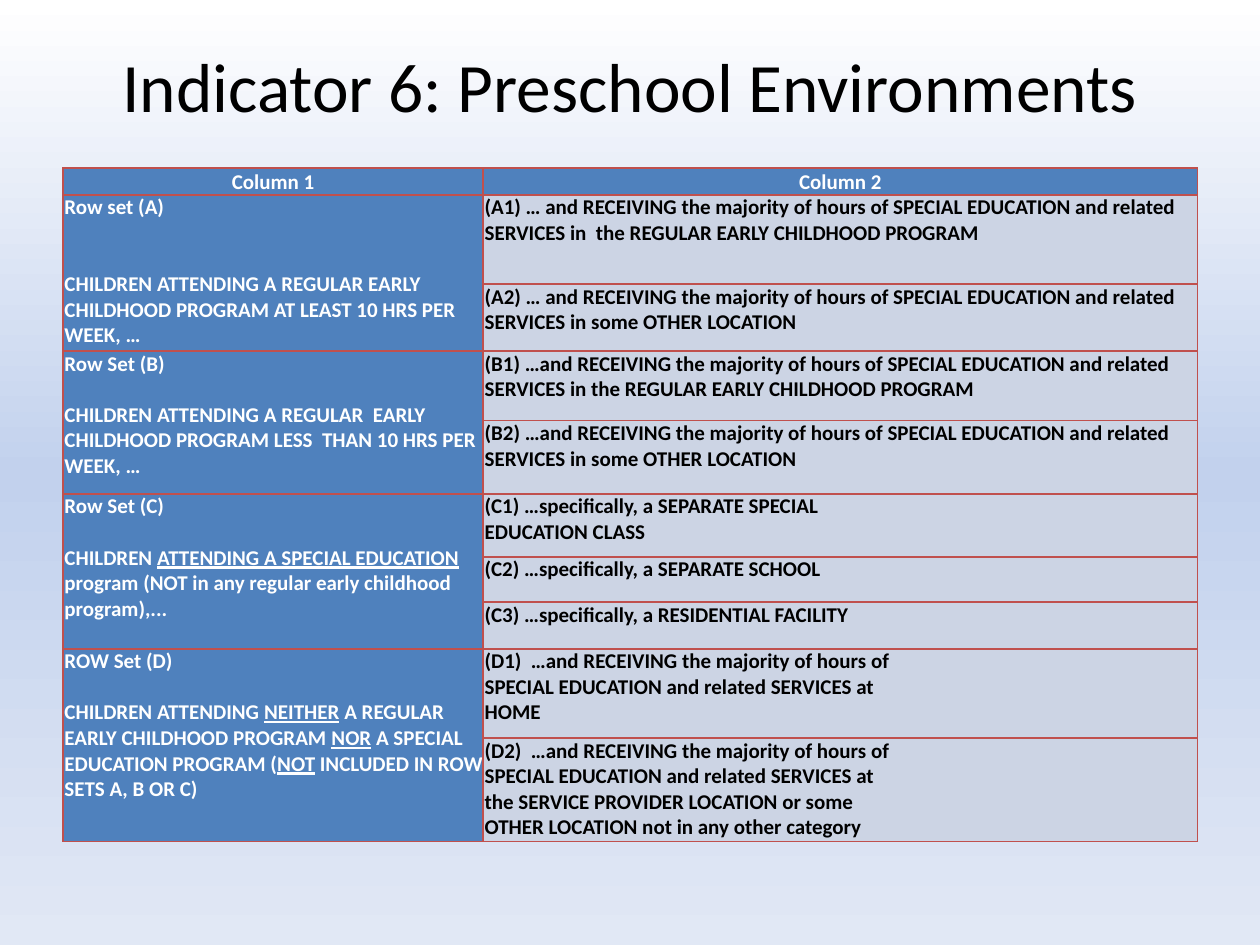
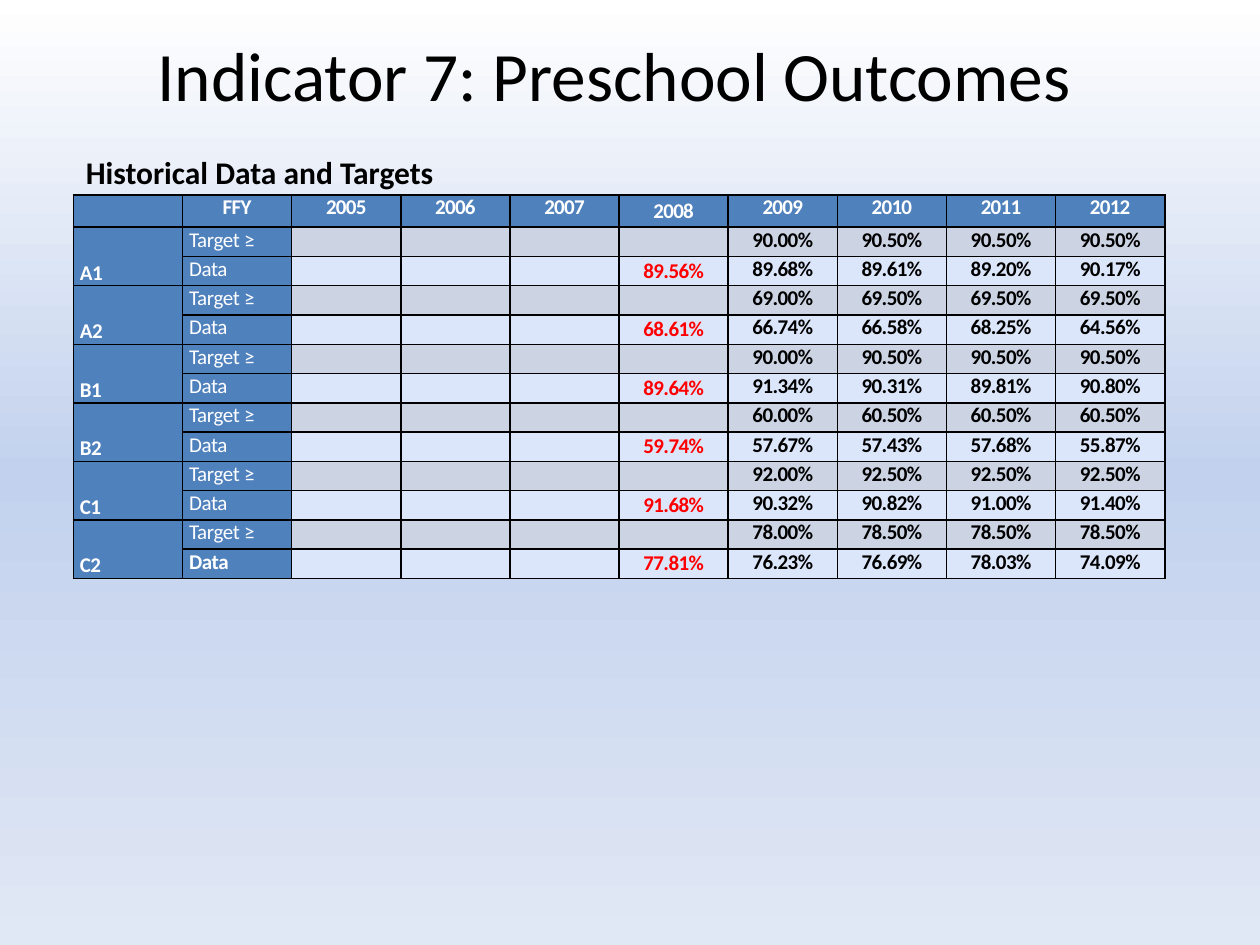
from lxml import etree
from copy import deepcopy
from pptx import Presentation
from pptx.dml.color import RGBColor as RGB
from pptx.enum.text import MSO_ANCHOR as Anchor, MSO_AUTO_SIZE as Fit, PP_ALIGN as Align
from pptx.oxml.ns import qn
from pptx.util import Cm, Pt

FONT = "Calibri"
HUE = {
    "text": "000000", "light": "FFFFFF", "head": "4F81BD", "band": "CCD4E4",
    "pale": "DCE6FA", "alert": "FF0000", "edge": "C0504D",
    "sky": "FFFFFF", "mid": "C2D1ED", "base": "E1E8F5",
}
LINE = 14.65  # height in points of one line of 12 pt text

# Label, gap in lines, description (underscores mark underlined words), rows
SETS = [
    ("Row set (A)", 2,
     "CHILDREN ATTENDING A REGULAR EARLY CHILDHOOD PROGRAM AT LEAST 10 HRS PER WEEK, …",
     ["(A1) … and RECEIVING the majority of hours of SPECIAL EDUCATION and related "
      "SERVICES in  the REGULAR EARLY CHILDHOOD PROGRAM",
      "(A2) … and RECEIVING the majority of hours of SPECIAL EDUCATION and related "
      "SERVICES in some OTHER LOCATION"]),
    ("Row Set (B)", 1,
     "CHILDREN ATTENDING A REGULAR  EARLY CHILDHOOD PROGRAM LESS  THAN 10 HRS PER WEEK, …",
     ["(B1) …and RECEIVING the majority of hours of SPECIAL EDUCATION and related "
      "SERVICES in the REGULAR EARLY CHILDHOOD PROGRAM",
      "(B2) …and RECEIVING the majority of hours of SPECIAL EDUCATION and related "
      "SERVICES in some OTHER LOCATION"]),
    ("Row Set (C)", 1,
     "CHILDREN _ATTENDING A SPECIAL EDUCATION_ program "
     "(NOT in any regular early childhood program),...",
     ["(C1) …specifically, a SEPARATE SPECIAL\nEDUCATION CLASS",
      "(C2) …specifically, a SEPARATE SCHOOL",
      "(C3) …specifically, a RESIDENTIAL FACILITY"]),
    ("ROW Set (D)", 1,
     "CHILDREN ATTENDING _NEITHER_ A REGULAR EARLY CHILDHOOD PROGRAM _NOR_ "
     "A SPECIAL EDUCATION PROGRAM (_NOT_ INCLUDED IN ROW SETS A, B OR C)",
     ["(D1)  …and RECEIVING the majority of hours of\n"
      "SPECIAL EDUCATION and related SERVICES at\nHOME",
      "(D2)  …and RECEIVING the majority of hours of\n"
      "SPECIAL EDUCATION and related SERVICES at\n"
      "the SERVICE PROVIDER LOCATION or some\n"
      "OTHER LOCATION not in any other category"]),
]
SET_ROWS = [0.54, 1.8, 1.35, 1.4, 1.48, 1.27, 0.91, 0.94, 1.8, 2.08]

YEARS = [str(year) for year in range(2005, 2013)]
# Targets for 2009 and for each later year, then data from 2008 on
SCORES = {
    "A1": (90, 90.5, [89.56, 89.68, 89.61, 89.20, 90.17]),
    "A2": (69, 69.5, [68.61, 66.74, 66.58, 68.25, 64.56]),
    "B1": (90, 90.5, [89.64, 91.34, 90.31, 89.81, 90.80]),
    "B2": (60, 60.5, [59.74, 57.67, 57.43, 57.68, 55.87]),
    "C1": (92, 92.5, [91.68, 90.32, 90.82, 91.00, 91.40]),
    "C2": (78, 78.5, [77.81, 76.23, 76.69, 78.03, 74.09]),
}


def color(name):
    return RGB.from_string(HUE[name])


def style(para, size, hue="text", bold=False, track=0):
    font = para.font
    font.name, font.size, font.bold = FONT, Pt(size), bold
    font.color.rgb = color(hue)
    if track:
        para._p.pPr.find(qn("a:defRPr")).set("spc", str(track))


def paint(master):
    """Give the master its three-stop vertical gradient."""
    fill = master.background.fill
    fill.gradient()
    fill.gradient_angle = 270
    stops = master.element.find(".//" + qn("a:gsLst"))
    stops.insert(1, deepcopy(stops[0]))
    for stop, name, pos in zip(fill.gradient_stops, ("sky", "mid", "base"), (0, 0.5, 1)):
        stop.color.rgb = color(name)
        stop.position = pos


def add_slide(deck, title, height):
    slide = deck.slides.add_slide(deck.slide_layouts[5])
    head = slide.shapes.title
    head.left, head.top, head.width, head.height = Cm(1.27), Cm(0.43), Cm(22.86), Cm(height)
    frame = head.text_frame
    frame.text = title
    frame.auto_size = Fit.NONE
    frame.vertical_anchor = Anchor.MIDDLE
    frame.paragraphs[0].alignment = Align.CENTER
    style(frame.paragraphs[0], 39.6)
    return slide


def add_grid(slide, left, top, cols, rows):
    shape = slide.shapes.add_table(len(rows), len(cols), Cm(left), Cm(top),
                                   Cm(sum(cols)), Cm(sum(rows)))
    grid = shape.table
    for col, width in zip(grid.columns, cols):
        col.width = Cm(width)
    for row, height in zip(grid.rows, rows):
        row.height = Cm(height)
    return grid


def write(para, text):
    """Fill a paragraph; underscores toggle underlining, newlines break lines."""
    for i, part in enumerate(text.split("_")):
        for j, line in enumerate(part.split("\n")):
            if j:
                para.add_line_break()
            if line:
                run = para.add_run()
                run.text = line
                if i % 2:
                    run.font.underline = True


def put(cell, text, fill, edge, hue="text", bold=True, align=Align.LEFT,
        anchor=Anchor.TOP, inset=0, track=0):
    cell.margin_left, cell.margin_right = Cm(inset), Cm(0)
    cell.margin_top = cell.margin_bottom = Cm(0)
    cell.vertical_anchor = anchor
    cell.fill.solid()
    cell.fill.fore_color.rgb = color(fill)
    props = cell._tc.tcPr
    for i, side in enumerate("LRTB"):
        line = etree.Element(qn("a:ln" + side), w=str(Pt(1)))
        solid = etree.SubElement(line, qn("a:solidFill"))
        etree.SubElement(solid, qn("a:srgbClr"), val=HUE[edge])
        props.insert(i, line)
    para = cell.text_frame.paragraphs[0]
    para.alignment = align
    write(para, text)
    style(para, 12, hue, bold, track)
    if not text:
        etree.SubElement(para._p, qn("a:endParaRPr"), sz="1200")


def add_sets(slide, left, top):
    grid = add_grid(slide, left, top, [8.47, 14.4], SET_ROWS)
    for col in range(2):
        put(grid.cell(0, col), f"Column {col + 1}", "head", "edge", "light",
            align=Align.CENTER, anchor=Anchor.BOTTOM)
    row = 1
    for label, gap, about, places in SETS:
        for i, place in enumerate(places):
            put(grid.cell(row + i, 0), "" if i else label, "head", "edge", "light", inset=0.03)
            put(grid.cell(row + i, 1), place, "band", "edge", inset=0.03)
        first = grid.cell(row, 0)
        para = first.text_frame.add_paragraph()
        para.space_before = Pt(gap * LINE)
        write(para, about)
        style(para, 12, "light", True)
        row += len(places)
        first.merge(grid.cell(row - 1, 0))


def add_scores(slide, left, top):
    grid = add_grid(slide, left, top, [2.2] * 10, [0.65] + [0.59] * 12)
    for col, name in enumerate(["", "FFY"] + YEARS):
        put(grid.cell(0, col), name, "head", "text", "light", align=Align.CENTER,
            anchor=Anchor.MIDDLE if name == "2008" else Anchor.TOP, track=-40)
    for i, (code, (start, later, data)) in enumerate(SCORES.items()):
        row = 2 * i + 1
        lines = [("Target ≥", "band", [None] * 4 + [start] + [later] * 3),
                 ("Data", "pale", [None] * 3 + data)]
        for j, (label, fill, values) in enumerate(lines):
            put(grid.cell(row + j, 0), "" if j else code, "head", "text", "light",
                anchor=Anchor.BOTTOM, inset=0.13, track=-30)
            put(grid.cell(row + j, 1), label, "head", "text", "light",
                bold=(code, label) == ("C2", "Data"), inset=0.13, track=-20)
            for year, value, col in zip(YEARS, values, range(2, 10)):
                base = year == "2008"
                put(grid.cell(row + j, col), "" if value is None else f"{value:.2f}%",
                    fill, "text", "alert" if base else "text", align=Align.CENTER,
                    anchor=Anchor.MIDDLE if base else Anchor.TOP, track=-30)
        grid.cell(row, 0).merge(grid.cell(row + 1, 0))


def add_label(slide, text, left, top):
    frame = slide.shapes.add_textbox(Cm(left), Cm(top), Cm(8.26), Cm(1.02)).text_frame
    frame.word_wrap = True
    frame.auto_size = Fit.SHAPE_TO_FIT_TEXT
    frame.text = text
    style(frame.paragraphs[0], 18, bold=True)


def main():
    deck = Presentation()
    deck.slide_width, deck.slide_height = Cm(25.4), Cm(19.05)
    paint(deck.slide_master)
    slide = add_slide(deck, "Indicator 6: Preschool Environments", 2.54)
    add_sets(slide, 1.27, 3.39)
    slide = add_slide(deck, "Indicator 7: Preschool Outcomes\t", 2.12)
    add_scores(slide, 1.48, 3.93)
    add_label(slide, "Historical Data and Targets", 1.48, 2.97)
    deck.save("out.pptx")


if __name__ == "__main__":
    main()
